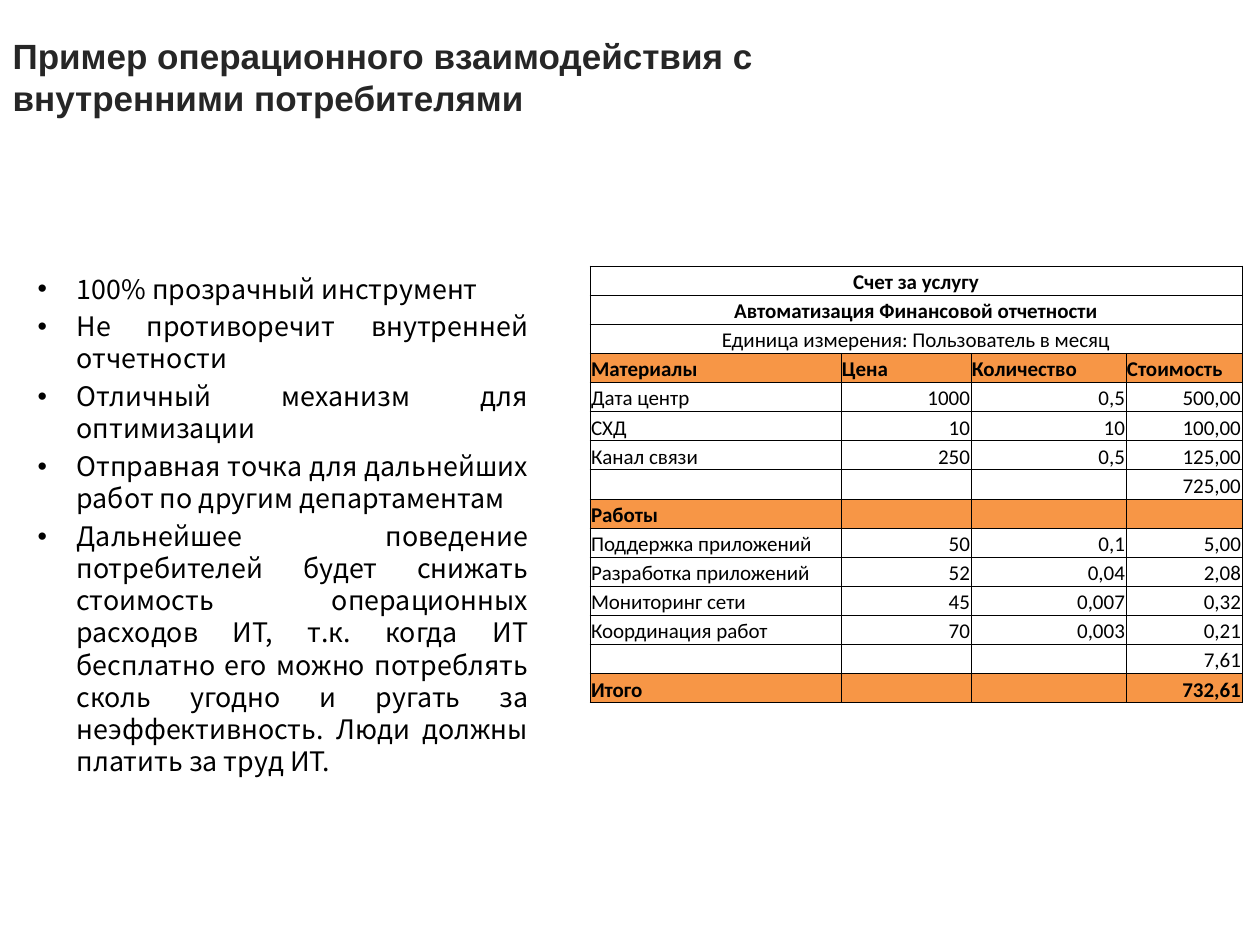
import dataclasses

import lxml.etree
import pptx
import pptx.dml.color
import pptx.enum.text
import pptx.oxml.ns
import pptx.util

EMU_PER_PX = 914400 / 126
ALIGN = pptx.enum.text.PP_ALIGN
ANCHOR = pptx.enum.text.MSO_ANCHOR
qn = pptx.oxml.ns.qn


@dataclasses.dataclass(frozen=True)
class Theme:
    """Colours, fonts and type sizes of the slide."""
    heading: str = "262626"
    ink: str = "000000"
    band: str = "F79646"
    title_font: str = "Arial"
    list_font: str = "Noto Sans CJK KR"
    invoice_font: str = "Calibri"
    title_size: float = 20
    list_size: float = 15.3
    list_gap: float = 3.2
    invoice_size: float = 12
    border: float = 0.5


THEME = Theme()

TITLE = "Пример операционного взаимодействия с \vвнутренними потребителями"
BENEFITS = [
    "100% прозрачный инструмент",
    "Не противоречит внутренней отчетности",
    "Отличный механизм для оптимизации",
    "Отправная точка для дальнейших работ по другим департаментам",
    "Дальнейшее поведение потребителей будет снижать стоимость операционных "
    "расходов ИТ, т.к. когда ИТ бесплатно его можно потреблять сколь угодно и "
    "ругать за неэффективность. Люди должны платить за труд ИТ.",
]
COLUMN_WIDTHS = [251, 130, 155, 116]
INVOICE_HEIGHT = 437
CAPTION_ROWS = 3
BOLD_ROWS = {0, 1, 3, 8, 14}
BAND_ROWS = {3, 8, 14}
COLUMN_HEADING_ROW = 3
INVOICE = [
    ("Счет за услугу", "", "", ""),
    ("Автоматизация Финансовой отчетности", "", "", ""),
    ("Единица измерения: Пользователь в месяц", "", "", ""),
    ("Материалы", "Цена", "Количество", "Стоимость"),
    ("Дата центр", "1000", "0,5", "500,00"),
    ("СХД", "10", "10", "100,00"),
    ("Канал связи", "250", "0,5", "125,00"),
    ("", "", "", "725,00"),
    ("Работы", "", "", ""),
    ("Поддержка приложений", "50", "0,1", "5,00"),
    ("Разработка приложений", "52", "0,04", "2,08"),
    ("Мониторинг сети", "45", "0,007", "0,32"),
    ("Координация работ", "70", "0,003", "0,21"),
    ("", "", "", "7,61"),
    ("Итого", "", "", "732,61"),
]


def px(length):
    """Turn pixels into EMU."""
    return pptx.util.Emu(round(length * EMU_PER_PX))


def rgb(colour):
    """Turn a hex string into a colour."""
    return pptx.dml.color.RGBColor.from_string(colour)


def place(shape, left, top, width, height):
    """Move and size a shape, in pixels."""
    shape.left, shape.top = px(left), px(top)
    shape.width, shape.height = px(width), px(height)


def format_runs(paragraph, font, size, colour, bold=False):
    """Give every run of a paragraph its font."""
    for run in paragraph.runs:
        run.font.name = font
        run.font.size = pptx.util.Pt(size)
        run.font.bold = bold
        run.font.color.rgb = rgb(colour)


def fill_title(title):
    """Write the two-line title."""
    place(title, 0, 3, 1260, 147)
    frame = title.text_frame
    frame.text = TITLE
    frame.auto_size = pptx.enum.text.MSO_AUTO_SIZE.NONE
    frame.vertical_anchor = ANCHOR.MIDDLE
    heading = frame.paragraphs[0]
    heading.alignment = ALIGN.LEFT
    format_runs(heading, THEME.title_font, THEME.title_size, THEME.heading, True)


def add_bullet(paragraph, indent):
    """Hang a paragraph on a round bullet."""
    properties = paragraph._p.get_or_add_pPr()
    properties.set("marL", str(px(indent)))
    properties.set("indent", str(-px(indent)))
    lxml.etree.SubElement(properties, qn("a:buFont"), typeface="Arial")
    lxml.etree.SubElement(properties, qn("a:buChar"), char="•")


def fill_benefits(body):
    """Write the justified list of benefits."""
    place(body, 25, 266, 516, 436)
    frame = body.text_frame
    frame.text = "\n".join(BENEFITS)
    frame.auto_size = pptx.enum.text.MSO_AUTO_SIZE.NONE
    frame.vertical_anchor = ANCHOR.TOP
    for index, benefit in enumerate(frame.paragraphs):
        add_bullet(benefit, 39)
        benefit.alignment = ALIGN.JUSTIFY
        benefit.line_spacing = 1.0
        benefit.space_before = pptx.util.Pt(THEME.list_gap if index else 0)
        format_runs(benefit, THEME.list_font, THEME.list_size, THEME.ink)


def add_borders(cell):
    """Draw a thin line on all four sides of a cell."""
    properties = cell._tc.get_or_add_tcPr()
    for index, side in enumerate(("a:lnL", "a:lnR", "a:lnT", "a:lnB")):
        line = lxml.etree.Element(qn(side), w=str(pptx.util.Pt(THEME.border)))
        solid = lxml.etree.SubElement(line, qn("a:solidFill"))
        lxml.etree.SubElement(solid, qn("a:srgbClr"), val=THEME.ink)
        properties.insert(index, line)


def cell_alignment(row, column):
    """Centre captions, right-align figures, left-align labels."""
    if row < CAPTION_ROWS:
        return ALIGN.CENTER
    if column and row != COLUMN_HEADING_ROW:
        return ALIGN.RIGHT
    return ALIGN.LEFT


def fill_cell(cell, entry, row, column):
    """Write and format one cell of the invoice."""
    cell.margin_left = cell.margin_right = cell.margin_top = px(1)
    cell.margin_bottom = 0
    cell.vertical_anchor = ANCHOR.BOTTOM
    if row in BAND_ROWS:
        cell.fill.solid()
        cell.fill.fore_color.rgb = rgb(THEME.band)
    else:
        cell.fill.background()
    add_borders(cell)
    cell.text_frame.text = entry
    paragraph = cell.text_frame.paragraphs[0]
    paragraph.alignment = cell_alignment(row, column)
    format_runs(paragraph, THEME.invoice_font, THEME.invoice_size, THEME.ink, row in BOLD_ROWS)
    if not entry:
        size = str(round(THEME.invoice_size * 100))
        lxml.etree.SubElement(paragraph._p, qn("a:endParaRPr"), sz=size)


def add_invoice(slide):
    """Add the invoice table."""
    frame = slide.shapes.add_table(
        len(INVOICE), len(COLUMN_WIDTHS), px(590), px(266),
        px(sum(COLUMN_WIDTHS)), px(INVOICE_HEIGHT))
    invoice = frame.table
    invoice.first_row = invoice.horz_banding = False
    for column, width in zip(invoice.columns, COLUMN_WIDTHS):
        column.width = px(width)
    for row, entries in enumerate(INVOICE):
        for column, entry in enumerate(entries):
            fill_cell(invoice.cell(row, column), entry, row, column)
    for row in range(CAPTION_ROWS):
        invoice.cell(row, 0).merge(invoice.cell(row, len(COLUMN_WIDTHS) - 1))


def main():
    """Build and save the slide."""
    deck = pptx.Presentation()
    deck.slide_width, deck.slide_height = px(1260), px(945)
    slide = deck.slides.add_slide(deck.slide_layouts[1])
    fill_title(slide.shapes.title)
    fill_benefits(slide.placeholders[1])
    add_invoice(slide)
    deck.save("out.pptx")


if __name__ == "__main__":
    main()
